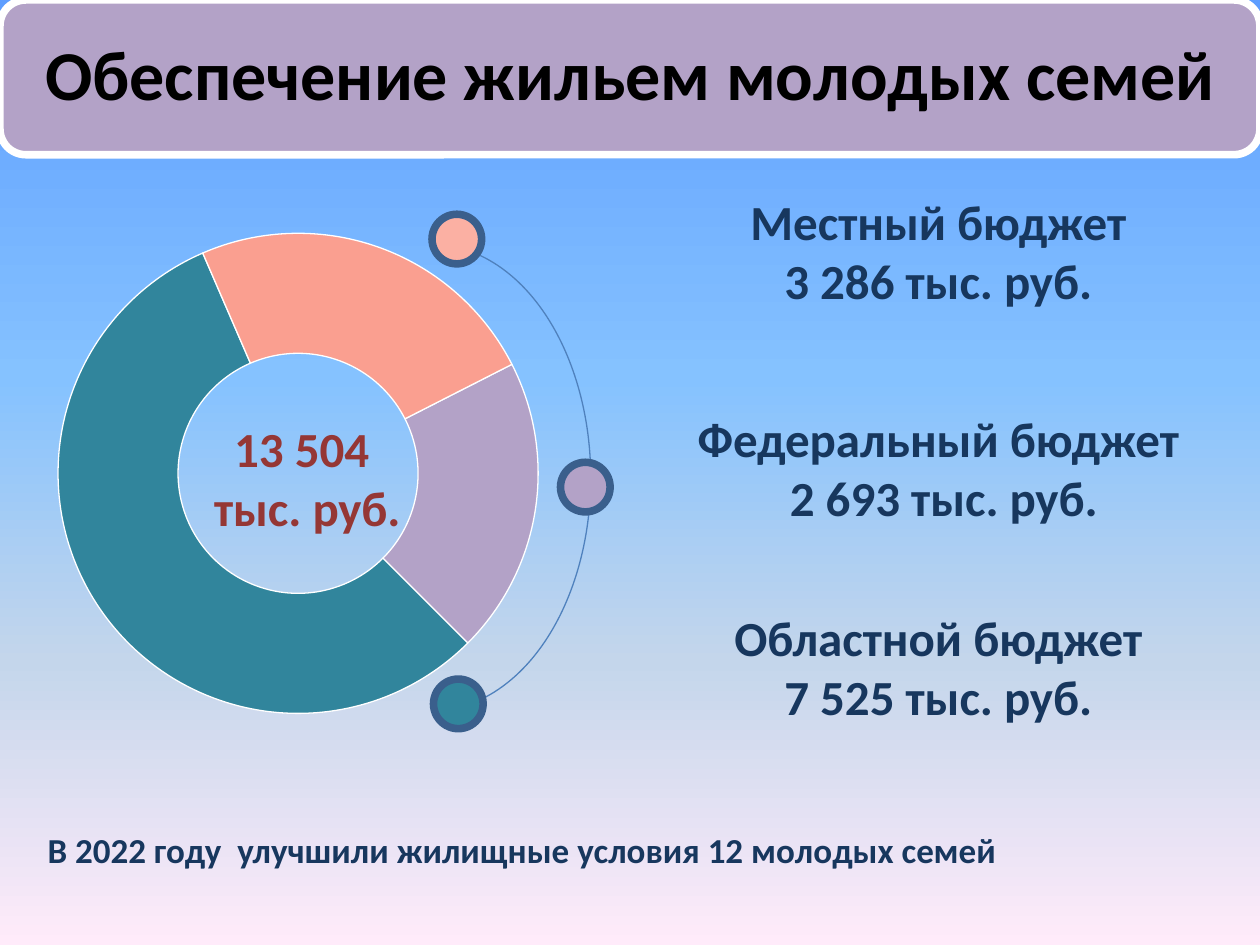
from lxml import etree
from pptx import Presentation
from pptx.chart.data import CategoryChartData as ChartData
from pptx.dml.color import RGBColor
from pptx.enum.chart import XL_CHART_TYPE as ChartType
from pptx.enum.shapes import MSO_SHAPE as Shape
from pptx.enum.text import MSO_ANCHOR as Anchor, PP_ALIGN as Align
from pptx.oxml import parse_xml
from pptx.oxml.ns import nsdecls, qn
from pptx.util import Cm, Pt

FONT = "Calibri"
NAVY, MAROON, RING = "17375E", "953735", "3A5F8C"
LILAC, TEAL, SALMON, PINK = "B3A2C7", "31859C", "FA9F90", "FBB0A3"
SKY = [(0, "5E9EFF"), (40, "85C2FF"), (70, "C4D6EB"), (100, "FFEBFA")]


def color(hex_string):
    return RGBColor.from_string(hex_string)


def set_format(target, values):
    for name, value in values.items():
        setattr(target, name, value)


def paint_background(slide, stops):
    """Vertical gradient from top to bottom."""
    fill = slide.background.fill
    fill.gradient()
    gradient = slide.background._cSld.find(".//" + qn("a:gradFill"))
    stop_list = gradient.find(qn("a:gsLst"))
    for old_stop in list(stop_list):
        stop_list.remove(old_stop)
    for position, hex_string in stops:
        stop = etree.SubElement(stop_list, qn("a:gs"), pos=str(position * 1000))
        etree.SubElement(stop, qn("a:srgbClr"), val=hex_string)
    gradient.find(qn("a:lin")).set("ang", str(90 * 60000))


def write(frame, lines, size, hex_string, align=Align.CENTER, inset=None):
    set_format(frame, {"word_wrap": True, "vertical_anchor": Anchor.MIDDLE})
    if inset is not None:
        sides = ("left", "right", "top", "bottom")
        set_format(frame, {f"margin_{side}": Cm(inset) for side in sides})
    for index, line in enumerate(lines):
        paragraph = frame.add_paragraph() if index else frame.paragraphs[0]
        paragraph.alignment = align
        run = paragraph.add_run()
        run.text = line
        set_format(run.font, {"name": FONT, "size": Pt(size), "bold": True})
        run.font.color.rgb = color(hex_string)


def add_text(slide, box, lines, size, hex_string, align=Align.CENTER):
    text_box = slide.shapes.add_textbox(*map(Cm, box))
    write(text_box.text_frame, lines, size, hex_string, align)


def add_figure(slide, kind, box, fill=None, line=None, width=4.33):
    figure = slide.shapes.add_shape(kind, *map(Cm, box))
    figure.shadow.inherit = False
    if fill:
        figure.fill.solid()
        figure.fill.fore_color.rgb = color(fill)
    else:
        figure.fill.background()
    if line:
        figure.line.color.rgb = color(line)
        figure.line.width = Pt(width)
    else:
        figure.line.fill.background()
    return figure


def add_marker(slide, left, top, fill):
    add_figure(slide, Shape.OVAL, (left, top, 1, 1), fill, RING)


def add_budget_ring(slide, box):
    data = ChartData()
    data.categories = ["1", "2", "3"]
    data.add_series("Series 1", (20, 56, 24))
    chart = slide.shapes.add_chart(
        ChartType.DOUGHNUT, *map(Cm, box), data).chart
    set_format(chart, {"has_legend": False, "has_title": False})
    set_format(chart.font, {"name": FONT, "size": Pt(18)})
    chart.font.color.rgb = color("000000")
    plot = chart.plots[0]
    set_format(plot, {"vary_by_categories": True, "has_data_labels": False})
    for index, fill in enumerate((LILAC, TEAL, SALMON)):
        sector = plot.series[0].points[index].format
        sector.fill.solid()
        sector.fill.fore_color.rgb = color(fill)
        sector.line.color.rgb = color("FFFFFF")
        sector.line.width = Pt(0.75)

    # Rotation, hole and the place of the ring in its frame
    space = chart._chartSpace
    for tag, value in (("c:firstSliceAng", 63), ("c:holeSize", 50)):
        space.find(".//" + qn(tag)).set("val", str(value))
    area = space.find(".//" + qn("c:plotArea"))
    for old_layout in area.findall(qn("c:layout")):
        area.remove(old_layout)
    shares = {"x": 0.06, "y": 0.03, "w": 0.88, "h": 0.94}
    parts = "".join(f'<c:{k} val="{v}"/>' for k, v in shares.items())
    area.insert(0, parse_xml(
        f'<c:layout {nsdecls("c")}><c:manualLayout>'
        '<c:layoutTarget val="inner"/><c:xMode val="edge"/>'
        f'<c:yMode val="edge"/>{parts}</c:manualLayout></c:layout>'))


def main():
    deck = Presentation()
    set_format(deck, {"slide_width": Cm(25.4), "slide_height": Cm(19.05)})
    slide = deck.slides.add_slide(deck.slide_layouts[6])
    paint_background(slide, SKY)

    # Arc that links the three markers
    arc = add_figure(slide, Shape.ARC, (5.51, 4.93, 6.4, 9.4),
                     line="4F81BD", width=0.75)
    arc.adjustments[0], arc.adjustments[1] = 162.95, 52.91
    add_marker(slide, 11.3, 9.32, LILAC)

    # Title
    title = add_figure(slide, Shape.ROUNDED_RECTANGLE, (0, 0, 25.4, 3.12),
                       LILAC, "FFFFFF")
    write(title.text_frame, ["Обеспечение жильем молодых семей"],
          40, "000000", inset=0.45)
    title.text_frame.paragraphs[0].line_spacing = 0.9

    # Ring with the total in its centre
    add_budget_ring(slide, (0.51, 4.39, 11, 10.31))
    total = add_figure(slide, Shape.OVAL, (2.49, 7.72, 7.19, 3.81))
    write(total.text_frame, ["13 504", " тыс. руб."], 28, MAROON)
    add_marker(slide, 8.71, 4.32, PINK)
    add_marker(slide, 8.74, 13.69, TEAL)

    # Sources of the money
    budgets = [
        (3.15, "Местный бюджет", "3 286 тыс. руб."),
        (7.52, "Федеральный бюджет", " 2 693 тыс. руб."),
        (11.53, "Областной бюджет", "7 525 тыс. руб."),
    ]
    for top, source, amount in budgets:
        add_text(slide, (13.11, top, 11.61, 3.81), [source, amount], 28, NAVY)

    # Result of the year
    add_text(slide, (0.71, 15.72, 24, 2.79),
             ["В 2022 году  улучшили жилищные условия 12 молодых семей"],
             20, NAVY, Align.JUSTIFY)

    deck.save("out.pptx")


if __name__ == "__main__":
    main()
